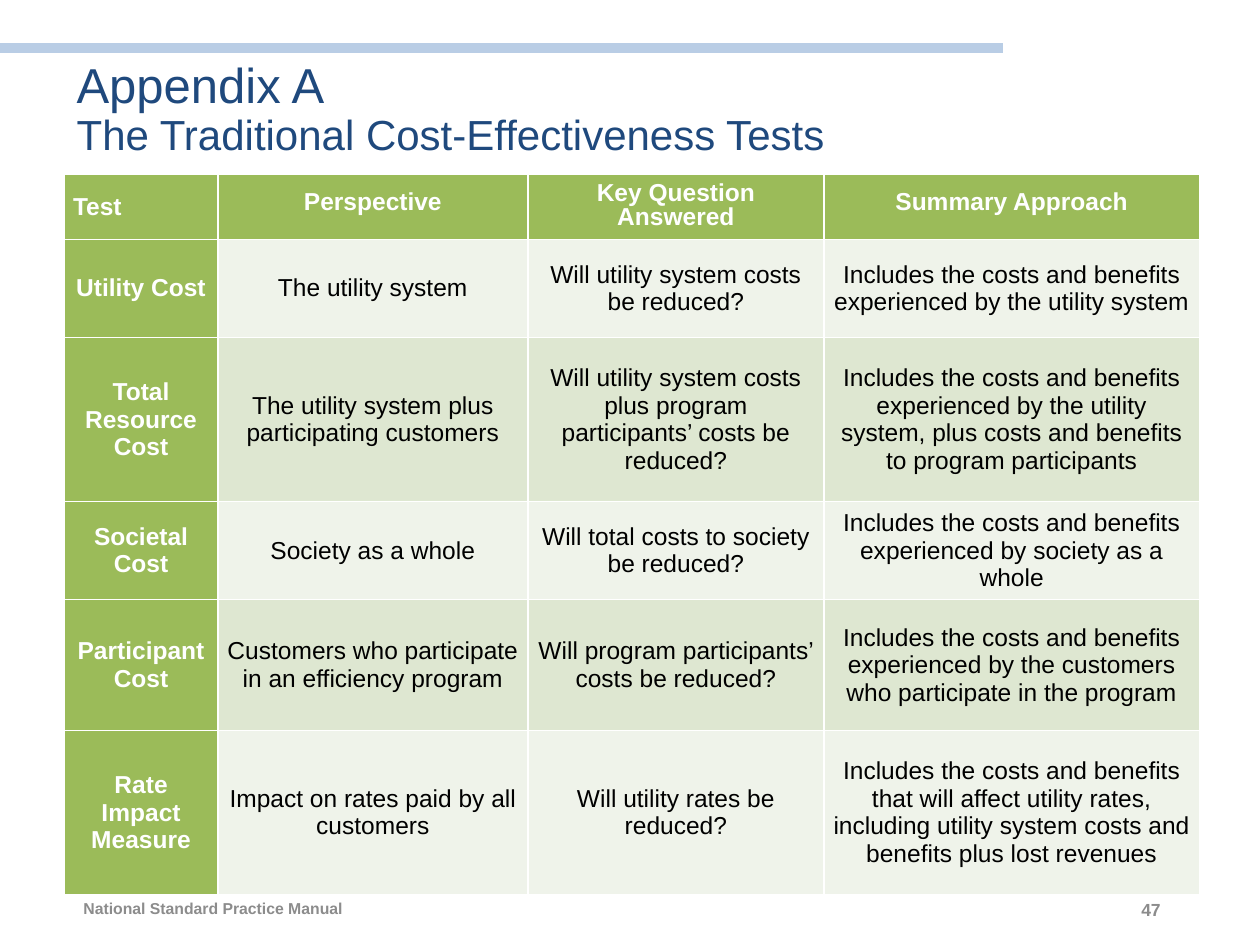
from lxml import etree
from pptx import Presentation
from pptx import util as u
from pptx.dml.color import RGBColor
from pptx.enum import shapes, text
from pptx.oxml import ns

COLORS = {
    "bar": "B9CDE5", "title": "1F497D", "header": "9BBB59", "light": "EFF3EA",
    "dark": "DEE7D1", "white": "FFFFFF", "black": "000000", "footer": "8C8C8C",
}
FONT = "Arial"
GRID_COLUMNS, GRID_ROWS = 100, 75
ALIGN = {"left": text.PP_ALIGN.LEFT, "center": text.PP_ALIGN.CENTER,
         "right": text.PP_ALIGN.RIGHT}

HEADINGS = ["Test", "Perspective", "Key Question Answered", "Summary Approach"]
TESTS = [
    ["Utility Cost", "The utility system",
     "Will utility system costs be reduced?",
     "Includes the costs and benefits experienced by the utility system"],
    ["Total Resource Cost", "The utility system plus participating customers",
     "Will utility system costs plus program participants’ costs be reduced?",
     "Includes the costs and benefits experienced by the utility system, "
     "plus costs and benefits to program participants"],
    ["Societal Cost", "Society as a whole",
     "Will total costs to society be reduced?",
     "Includes the costs and benefits experienced by society as a whole"],
    ["Participant Cost", "Customers who participate in an efficiency program",
     "Will program participants’ costs be reduced?",
     "Includes the costs and benefits experienced by the customers "
     "who participate in the program"],
    ["Rate Impact Measure", "Impact on rates paid by all customers",
     "Will utility rates be reduced?",
     "Includes the costs and benefits that will affect utility rates, "
     "including utility system costs and benefits plus lost revenues"],
]
HEADING_FORMATS = [
    {"align": "left", "before": 6, "after": 2},
    {"spacing": u.Pt(10)},
    {"spacing": u.Pt(14)},
    {"spacing": u.Pt(10)},
]


def rgb(name):
    return RGBColor.from_string(COLORS[name])


def write(frame, lines, sizes, color, bold=False, align="left",
          spacing=None, before=0, after=0):
    """Fill a frame with one paragraph, each line in its own size."""
    frame.word_wrap = True
    paragraph = frame.paragraphs[0]
    paragraph.alignment = ALIGN[align]
    paragraph.space_before, paragraph.space_after = u.Pt(before), u.Pt(after)
    if spacing:
        paragraph.line_spacing = spacing
    for number, (line, size) in enumerate(zip(lines, sizes)):
        if number:
            paragraph.add_line_break()
        run = paragraph.add_run()
        run.text = line
        run.font.name, run.font.size, run.font.bold = FONT, u.Pt(size), bold
        run.font.color.rgb = rgb(color)


def add_borders(cell, color, width):
    properties = cell._tc.get_or_add_tcPr()
    for position, side in enumerate(("lnL", "lnR", "lnT", "lnB")):
        border = etree.Element(ns.qn(f"a:{side}"), w=str(u.Pt(width)))
        fill = etree.SubElement(border, ns.qn("a:solidFill"))
        etree.SubElement(fill, ns.qn("a:srgbClr"), val=COLORS[color])
        properties.insert(position, border)


class Deck:
    def __init__(self):
        self.presentation = Presentation()
        self.presentation.slide_width = u.Inches(10)
        self.presentation.slide_height = u.Inches(7.5)
        self.slide = self.presentation.slides.add_slide(
            self.presentation.slide_layouts[6])

    def x(self, columns):
        return round(self.presentation.slide_width * columns / GRID_COLUMNS)

    def y(self, rows):
        return round(self.presentation.slide_height * rows / GRID_ROWS)

    def box(self, left, top, width, height):
        return self.x(left), self.y(top), self.x(width), self.y(height)

    def bar(self, left, right, top, width):
        line = self.slide.shapes.add_connector(
            shapes.MSO_CONNECTOR.STRAIGHT,
            self.x(left), self.y(top), self.x(right), self.y(top))
        line.line.color.rgb = rgb("bar")
        line.line.width = u.Pt(width)
        etree.SubElement(line._element.spPr, ns.qn("a:effectLst"))

    def label(self, place, lines, sizes, color, **style):
        frame = self.slide.shapes.add_textbox(*self.box(*place)).text_frame
        frame.vertical_anchor = text.MSO_ANCHOR.MIDDLE
        write(frame, lines, sizes, color, **style)

    def cell(self, cell, content, fill, color, **style):
        cell.fill.solid()
        cell.fill.fore_color.rgb = rgb(fill)
        cell.vertical_anchor = text.MSO_ANCHOR.MIDDLE
        cell.margin_left = cell.margin_right = self.x(0.7)
        cell.margin_top = cell.margin_bottom = 0
        add_borders(cell, "white", 1)
        write(cell.text_frame, [content], [14], color,
              **{"align": "center", "before": 2, **style})

    def table(self, left, top, widths, heights):
        place = self.box(left, top, sum(widths), sum(heights))
        table = self.slide.shapes.add_table(
            len(heights), len(widths), *place).table
        for column, width in zip(table.columns, widths):
            column.width = self.x(width)
        for row, height in zip(table.rows, heights):
            row.height = self.y(height)
        for column, heading in enumerate(HEADINGS):
            self.cell(table.cell(0, column), heading, "header", "white",
                      bold=True, **HEADING_FORMATS[column])
        for row, (test, *details) in enumerate(TESTS, 1):
            self.cell(table.cell(row, 0), test, "header", "white", bold=True)
            band = "light" if row % 2 else "dark"
            for column, detail in enumerate(details, 1):
                self.cell(table.cell(row, column), detail, band, "black")


def main():
    deck = Deck()
    deck.bar(0, 79.6, 3.8, 6)
    deck.label((0, 70.1, 33.8, 4), ["National Standard Practice Manual"], [9],
               "footer", bold=True, align="center")
    deck.label((5.1, 3.6, 86.2, 10.3),
               ["Appendix A", "The Traditional Cost-Effectiveness Tests"],
               [28, 24], "title", spacing=0.9)
    deck.table(5.1, 13.8, [12.2, 24.6, 23.5, 29.8],
               [5.2, 7.8, 13, 7.8, 10.4, 13])
    deck.label((70.6, 70.3, 22.5, 3.8), ["47"], [10], "footer",
               bold=True, align="right")
    deck.presentation.save("out.pptx")


if __name__ == "__main__":
    main()
